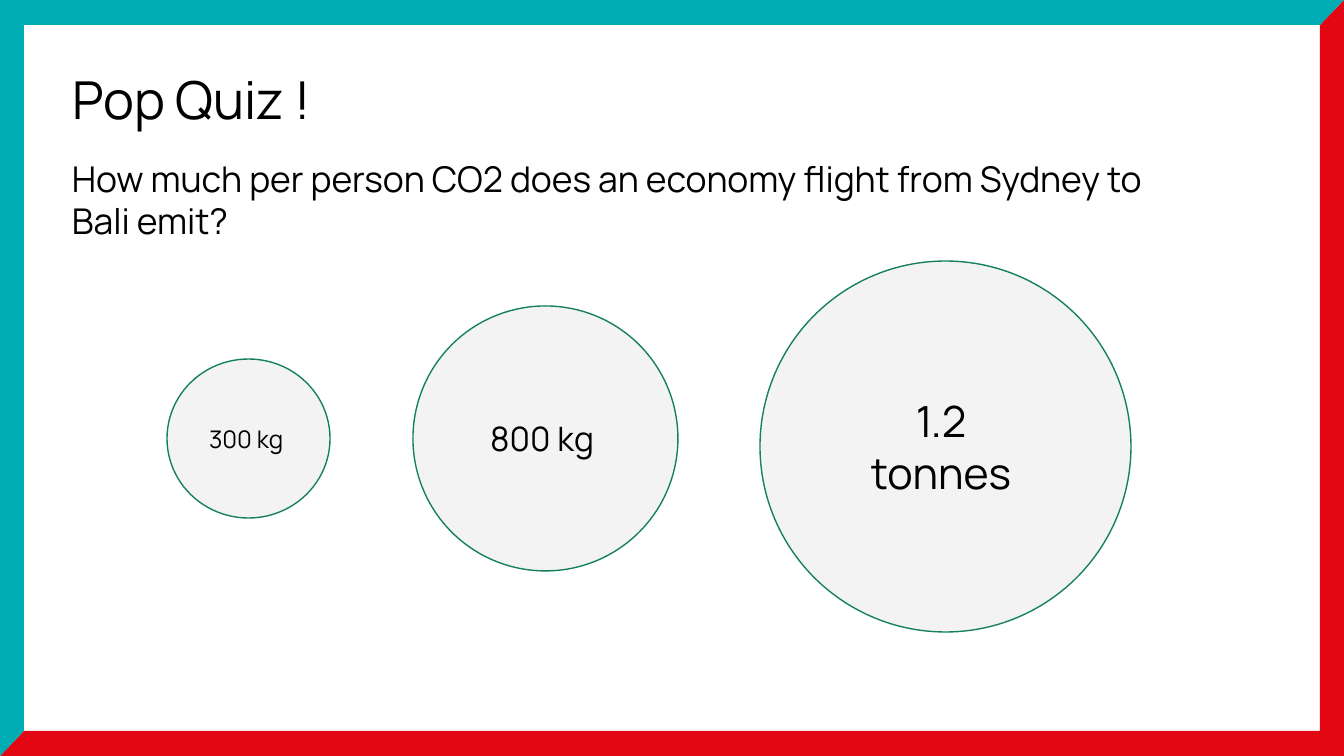
from pptx import Presentation
from pptx import util as u
from pptx.dml.color import RGBColor
from pptx.enum import shapes, text

PX = 914400 / 134.4
WIDTH, HEIGHT = 1344, 756
BORDER_X, BORDER_Y = 24, 25


def px(length):
    return u.Emu(round(length * PX))


def colour(code):
    return RGBColor.from_string(code)


class QuizPage:
    """Style of the quiz and the slide it is drawn on."""

    font, ink = "Manrope", "000000"
    circle_fill, circle_line = "F3F3F3", "158158"
    inset = 13

    def __init__(self, page):
        self.page = page

    def set_text(self, shape, lines, size, align, anchor):
        frame = shape.text_frame
        frame.word_wrap = True
        frame.vertical_anchor = anchor
        frame.margin_left = frame.margin_right = px(self.inset)
        frame.margin_top = frame.margin_bottom = px(self.inset)
        frame.text = "\n".join(lines)
        for para in frame.paragraphs:
            para.alignment = align
            para.font.name = self.font
            para.font.size = u.Pt(size)
            para.font.color.rgb = colour(self.ink)

    def band(self, points, fill):
        builder = self.page.shapes.build_freeform(*points[0], scale=PX)
        builder.add_line_segments(points[1:], close=True)
        shape = builder.convert_to_shape()
        shape.shadow.inherit = False
        shape.fill.solid()
        shape.fill.fore_color.rgb = colour(fill)
        shape.line.fill.background()

    def text_box(self, bounds, line, size):
        box = self.page.shapes.add_textbox(*map(px, bounds))
        self.set_text(box, [line], size,
                      text.PP_ALIGN.LEFT, text.MSO_ANCHOR.TOP)

    def circle(self, bounds, lines, size):
        shape = self.page.shapes.add_shape(
            shapes.MSO_SHAPE.OVAL, *map(px, bounds))
        shape.shadow.inherit = False
        shape.fill.solid()
        shape.fill.fore_color.rgb = colour(self.circle_fill)
        shape.line.color.rgb = colour(self.circle_line)
        shape.line.width = u.Pt(0.75)
        self.set_text(shape, lines, size,
                      text.PP_ALIGN.CENTER, text.MSO_ANCHOR.MIDDLE)


def main():
    deck = Presentation()
    deck.slide_width, deck.slide_height = px(WIDTH), px(HEIGHT)
    quiz = QuizPage(deck.slides.add_slide(deck.slide_layouts[6]))

    right, bottom = WIDTH - BORDER_X, HEIGHT - BORDER_Y
    diagonal = [(0, HEIGHT), (BORDER_X, bottom)]
    inner_end = [(right, BORDER_Y), (WIDTH, 0)]
    quiz.band(diagonal + [(right, bottom)] + inner_end + [(WIDTH, HEIGHT)],
              "E30613")
    quiz.band(diagonal + [(BORDER_X, BORDER_Y)] + inner_end + [(0, 0)],
              "00ACB3")

    quiz.text_box((59, 54, 624, 90), "Pop Quiz !", 28)
    quiz.text_box(
        (59, 144, 1102, 113),
        "How much per person CO2 does an economy flight from Sydney to "
        "Bali emit?", 19)

    answers = [
        ((167, 359, 163, 159), ["300 kg "], 13),
        ((413, 306, 265, 265), ["800 kg "], 18),
        ((760, 261, 371, 371), ["1.2 ", "tonnes "], 23),
    ]
    for bounds, lines, size in answers:
        quiz.circle(bounds, lines, size)

    deck.save("out.pptx")


if __name__ == "__main__":
    main()
